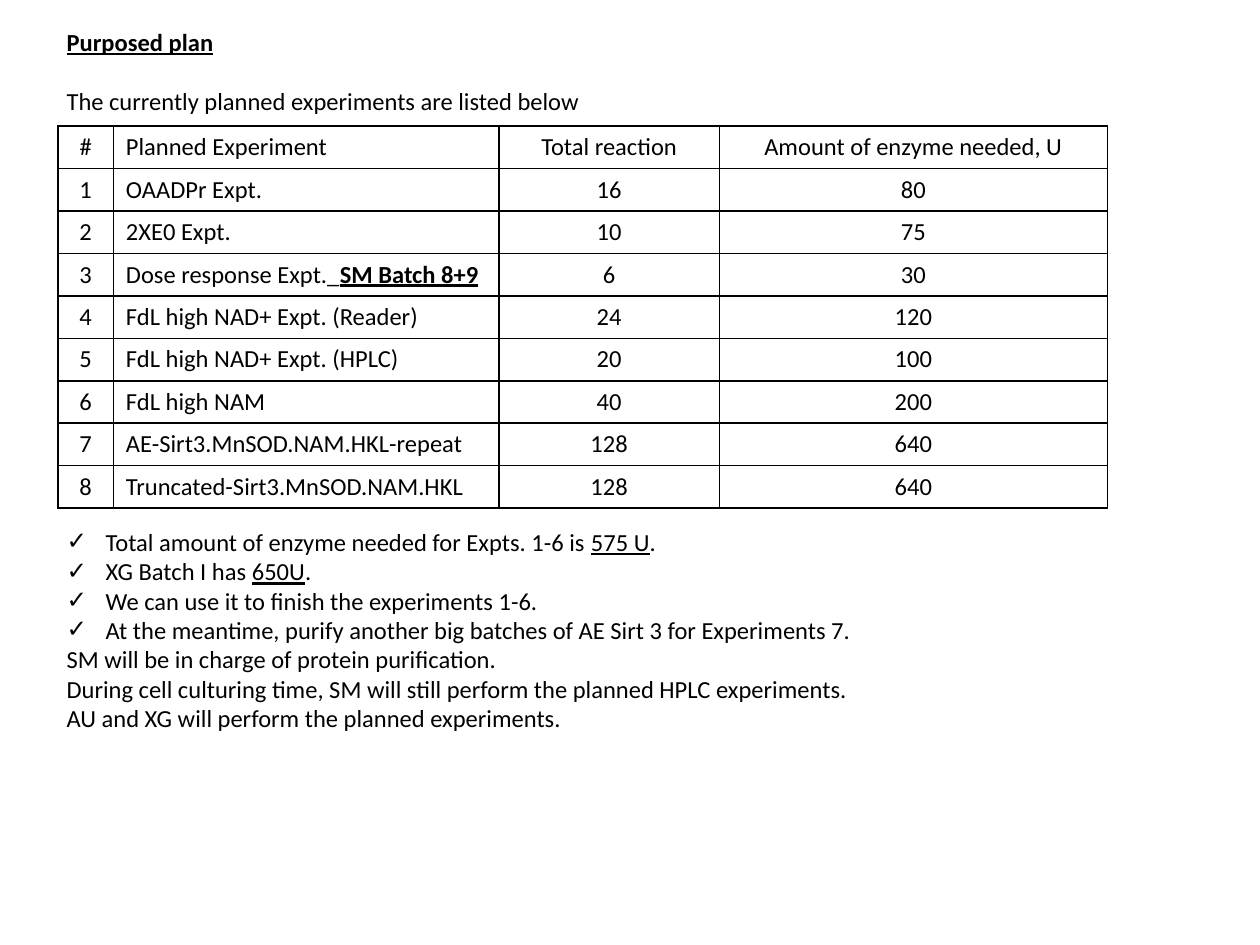
from dataclasses import dataclass

from lxml import etree
from pptx import Presentation
from pptx.dml.color import RGBColor
from pptx.enum.text import MSO_ANCHOR, MSO_AUTO_SIZE, PP_ALIGN
from pptx.oxml.ns import qn
from pptx.util import Inches, Pt

LEFT, CENTER = PP_ALIGN.LEFT, PP_ALIGN.CENTER
TOP, MIDDLE = MSO_ANCHOR.TOP, MSO_ANCHOR.MIDDLE
FIT_SHAPE = MSO_AUTO_SIZE.SHAPE_TO_FIT_TEXT


@dataclass(frozen=True)
class Theme:
    font: str = "Calibri"
    size: int = 14
    ink: str = "000000"
    border: float = 1
    line_gap: float = 16.8
    indent: float = 0.31
    bullet: str = "✓"


THEME = Theme()
SLIDE_W, SLIDE_H = Inches(10), Inches(7.5)
EMPHASIS = {"bold": True, "underline": True}
UNDERLINE = {"underline": True}

COLUMN_WEIGHTS = (0.44, 3.06, 1.75, 3.08)
COLUMN_FORMATS = ((CENTER, TOP), (LEFT, MIDDLE), (CENTER, MIDDLE), (CENTER, MIDDLE))
HEADER = ("#", "Planned Experiment", "Total reaction", "Amount of enzyme needed, U")
EXPERIMENTS = (
    ("OAADPr Expt.", 16, 80),
    ("2XE0 Expt.", 10, 75),
    ((("Dose response Expt._", {}), ("SM Batch 8+9", EMPHASIS)), 6, 30),
    ("FdL high NAD+ Expt. (Reader)", 24, 120),
    ("FdL high NAD+ Expt. (HPLC)", 20, 100),
    ("FdL high NAM", 40, 200),
    ("AE-Sirt3.MnSOD.NAM.HKL-repeat", 128, 640),
    ("Truncated-Sirt3.MnSOD.NAM.HKL", 128, 640),
)

INTRO = (
    ((("Purposed plan", EMPHASIS),), 0),
    ("The currently planned experiments are listed below", 1),
)
LINES_BESIDE_TABLE = 14
CHECKS = (
    (("Total amount of enzyme needed for Expts. 1-6 is ", {}), ("575 U", UNDERLINE), (".", {})),
    (("XG Batch I has ", {}), ("650U", UNDERLINE), (".", {})),
    "We can use it to finish the experiments 1-6.",
    "At the meantime, purify another big batches of AE Sirt 3 for Experiments 7.",
)
CLOSING = (
    "SM will be in charge of protein purification.",
    "During cell culturing time, SM will still perform the planned HPLC experiments.",
    "AU and XG will perform the planned experiments.",
)


def share(left, top, width, height):
    return tuple(round(v * side) for v, side in
                 zip((left, top, width, height), (SLIDE_W, SLIDE_H) * 2))


def write_runs(p, content):
    runs = content if isinstance(content, tuple) else ((str(content), {}),)
    base = {"name": THEME.font, "size": Pt(THEME.size), "bold": False, "underline": False}
    for text, emphasis in runs:
        r = p.add_run()
        r.text = text
        for name, value in {**base, **emphasis}.items():
            setattr(r.font, name, value)
        r.font.color.rgb = RGBColor.from_string(THEME.ink)


def add_bullet(p):
    pPr = p._p.get_or_add_pPr()
    indent = Inches(THEME.indent)
    pPr.set("marL", str(indent))
    pPr.set("indent", str(-indent))
    etree.SubElement(pPr, qn("a:buFont"), typeface=THEME.font)
    etree.SubElement(pPr, qn("a:buChar"), char=THEME.bullet)


def add_borders(cell):
    tcPr = cell._tc.get_or_add_tcPr()
    for side in ("a:lnL", "a:lnR", "a:lnT", "a:lnB"):
        ln = etree.SubElement(tcPr, qn(side), w=str(Pt(THEME.border)))
        fill = etree.SubElement(ln, qn("a:solidFill"))
        etree.SubElement(fill, qn("a:srgbClr"), val=THEME.ink)


def build_experiment_table(s, box):
    rows = [HEADER] + [(n, *row) for n, row in enumerate(EXPERIMENTS, 1)]
    table = s.shapes.add_table(len(rows), len(HEADER), *box).table
    table.first_row = table.horz_banding = False
    for column, weight in zip(table.columns, COLUMN_WEIGHTS):
        column.width = round(box[2] * weight / sum(COLUMN_WEIGHTS))
    for i, row in enumerate(rows):
        for j, (content, (align, anchor)) in enumerate(zip(row, COLUMN_FORMATS)):
            cell = table.cell(i, j)
            add_borders(cell)
            cell.fill.background()
            cell.vertical_anchor = anchor
            p = cell.text_frame.paragraphs[0]
            p.alignment = align
            write_runs(p, content)


def build_plan_text(s, box):
    tf = s.shapes.add_textbox(*box).text_frame
    tf.word_wrap = False
    tf.auto_size = FIT_SHAPE
    lines = [(content, gap, False) for content, gap in INTRO]
    lines += [(content, 0 if i else LINES_BESIDE_TABLE, True)
              for i, content in enumerate(CHECKS)]
    lines += [(content, 0, False) for content in CLOSING]
    for i, (content, gap, checked) in enumerate(lines):
        p = tf.add_paragraph() if i else tf.paragraphs[0]
        p.alignment = LEFT
        if gap:
            p.space_before = Pt(round(gap * THEME.line_gap, 1))
        if checked:
            add_bullet(p)
        write_runs(p, content)


def main():
    prs = Presentation()
    prs.slide_width, prs.slide_height = SLIDE_W, SLIDE_H
    s = prs.slides.add_slide(prs.slide_layouts[6])
    build_experiment_table(s, share(0.046, 2 / 15, 0.833, 0.4))
    build_plan_text(s, share(0.043, 0.022, 0.649, 0.768))
    prs.save("out.pptx")


if __name__ == "__main__":
    main()
